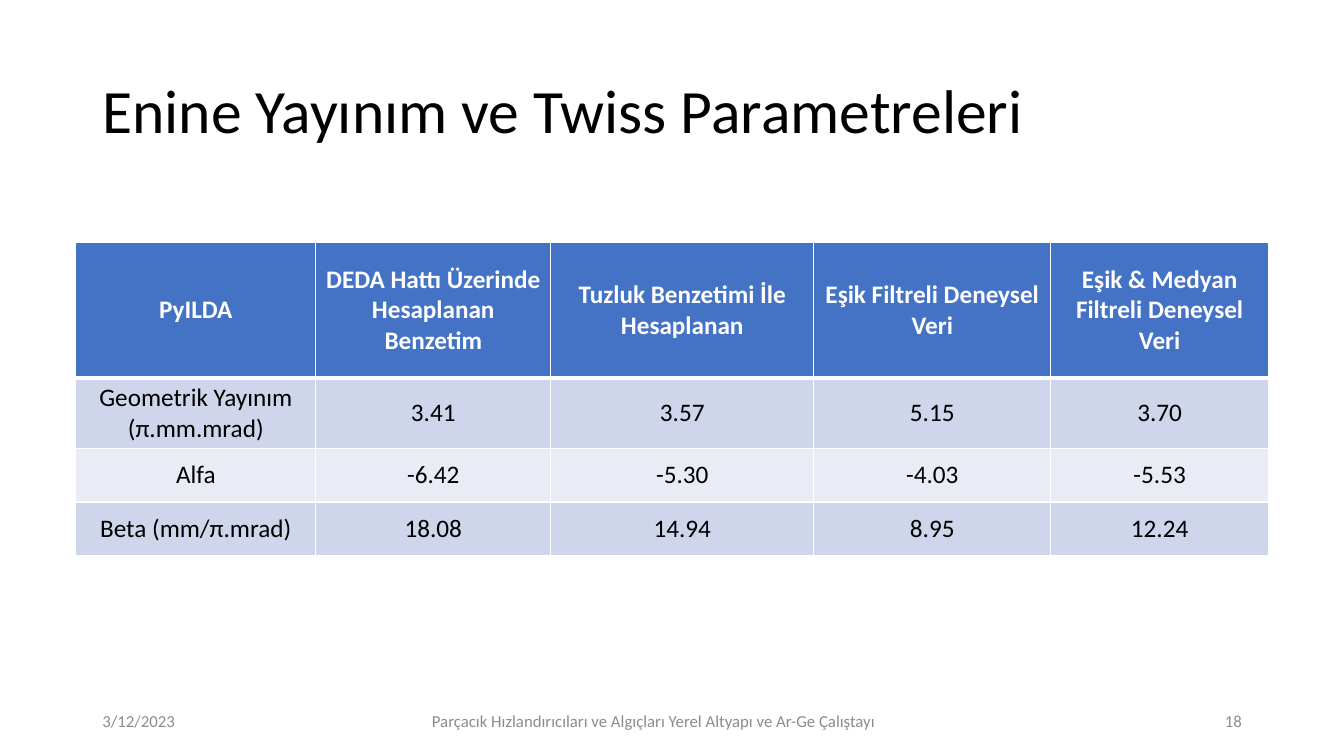
"""Build the slide on transverse emittance and Twiss parameters."""
from lxml.etree import SubElement
from pptx import Presentation
from pptx.dml.color import RGBColor
from pptx.enum.text import MSO_ANCHOR as Anchor, PP_ALIGN as Align
from pptx.oxml.ns import qn
from pptx.util import Cm, Pt

BLACK = RGBColor(0x00, 0x00, 0x00)
WHITE = RGBColor(0xFF, 0xFF, 0xFF)
GREY = RGBColor(0x8C, 0x8C, 0x8C)
BLUE = RGBColor(0x44, 0x72, 0xC4)
BAND_DARK = RGBColor(0xCF, 0xD5, 0xEA)
BAND_LIGHT = RGBColor(0xE9, 0xEB, 0xF5)

TITLE = "Enine Yayınım ve Twiss Parametreleri"
PARAMETERS = [
    ["PyILDA", "DEDA Hattı Üzerinde Hesaplanan\nBenzetim",
     "Tuzluk Benzetimi İle Hesaplanan", "Eşik Filtreli Deneysel Veri",
     "Eşik & Medyan Filtreli Deneysel Veri"],
    ["Geometrik Yayınım (π.mm.mrad)", "3.41", "3.57", "5.15", "3.70"],
    ["Alfa", "-6.42", "-5.30", "-4.03", "-5.53"],
    ["Beta (mm/π.mrad)", "18.08", "14.94", "8.95", "12.24"],
]
COLUMN_WIDTHS = [6.05, 5.92, 6.63, 5.97, 5.49]
ROW_HEIGHTS = [3.4, 1.78, 1.35, 1.35]
FOOTER = [
    ("3/12/2023", 2.33, 7.62, Align.LEFT),
    ("Parçacık Hızlandırıcıları ve Algıçları Yerel Altyapı ve Ar-Ge Çalıştayı",
     10.29, 12.37, Align.CENTER),
    ("18", 23.93, 7.62, Align.RIGHT),
]


def write(frame, text, align, size, color, bold=False, spacing=1.0):
    frame.text = text
    for paragraph in frame.paragraphs:
        paragraph.alignment = align
        paragraph.line_spacing = spacing
        style = {"name": "Calibri", "size": Pt(size), "bold": bold}
        for key, value in style.items():
            setattr(paragraph.font, key, value)
        paragraph.font.color.rgb = color


def add_text(slide, text, left, top, width, height, *style, **options):
    frame = slide.shapes.add_textbox(
        Cm(left), Cm(top), Cm(width), Cm(height)).text_frame
    frame.word_wrap = True
    frame.vertical_anchor = Anchor.MIDDLE
    write(frame, text, *style, **options)


def add_borders(cell, widths):
    properties = cell._tc.get_or_add_tcPr()
    for side, width in widths.items():
        line = SubElement(properties, qn(f"a:ln{side}"), w=str(Pt(width)))
        fill = SubElement(line, qn("a:solidFill"))
        SubElement(fill, qn("a:srgbClr"), val=str(WHITE))


def add_parameters(slide):
    table = slide.shapes.add_table(
        len(PARAMETERS), len(COLUMN_WIDTHS), Cm(1.91), Cm(6.12),
        Cm(sum(COLUMN_WIDTHS)), Cm(sum(ROW_HEIGHTS))).table
    for column, width in zip(table.columns, COLUMN_WIDTHS):
        column.width = Cm(width)
    for r, (values, height) in enumerate(zip(PARAMETERS, ROW_HEIGHTS)):
        table.rows[r].height = Cm(height)
        header = r == 0
        band = BLUE if header else BAND_DARK if r % 2 else BAND_LIGHT
        for c, value in enumerate(values):
            cell = table.cell(r, c)
            cell.vertical_anchor = Anchor.MIDDLE
            add_borders(cell, {"L": 1, "R": 1, "T": 3 if r == 1 else 1,
                               "B": 3 if header else 1})
            cell.fill.solid()
            cell.fill.fore_color.rgb = band
            write(cell.text_frame, value, Align.CENTER, 18,
                  WHITE if header else BLACK, bold=header)


def main():
    deck = Presentation()
    deck.slide_width, deck.slide_height = Cm(33.87), Cm(19.05)
    slide = deck.slides.add_slide(deck.slide_layouts[6])
    add_text(slide, TITLE, 2.33, 1.01, 29.21, 3.68,
             Align.LEFT, 44, BLACK, spacing=0.9)
    add_parameters(slide)
    for text, left, width, align in FOOTER:
        add_text(slide, text, left, 17.66, width, 1.01, align, 12, GREY)
    deck.save("out.pptx")


if __name__ == "__main__":
    main()
